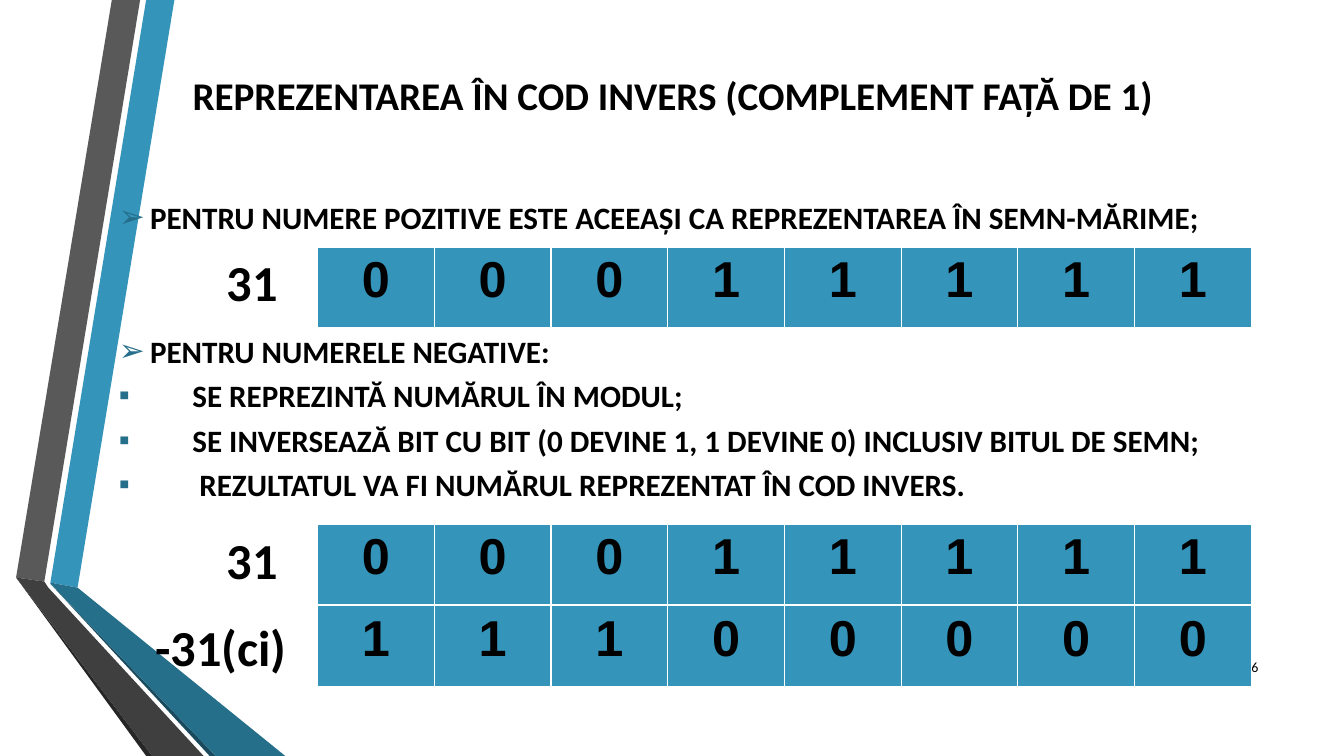
from dataclasses import dataclass

from lxml.etree import SubElement
from pptx import Presentation
from pptx.dml.color import RGBColor
from pptx.enum.text import MSO_ANCHOR, PP_ALIGN
from pptx.oxml.ns import qn
from pptx.util import Inches, Pt

BLACK = RGBColor(0x00, 0x00, 0x00)
WHITE = RGBColor(0xFF, 0xFF, 0xFF)
BLUE = RGBColor(0x34, 0x94, 0xBA)
TEAL = RGBColor(0x26, 0x6F, 0x8B)
NAVY = RGBColor(0x19, 0x4A, 0x5D)
GRAY = RGBColor(0x59, 0x59, 0x59)
DARK_GRAY = RGBColor(0x3F, 0x3F, 0x3F)
CHARCOAL = RGBColor(0x26, 0x26, 0x26)

BITS = 8
TABLE_LEFT, TABLE_WIDTH, ROW_HEIGHT = 3.15, 9.26, 0.81
FRAME_SIDE = 3.28
BORDERS = {"a:lnL": 1, "a:lnR": 1, "a:lnT": 1, "a:lnB": 3}


@dataclass
class Band:
    color: RGBColor
    points: list[tuple[float, float]]


@dataclass
class Bullet:
    text: str
    mark: str
    indent: float
    before: float = 10.4


@dataclass
class Label:
    text: str
    left: float
    top: float
    width: float


@dataclass
class Register:
    bits: str
    top: float


BANDS = [
    Band(BLUE, [(0.5, 5.78), (0.77, 5.83), (1.73, 0), (1.45, 0)]),
    Band(GRAY, [(1.39, 0), (1.11, 0), (0.16, 5.73), (0.44, 5.77)]),
    Band(CHARCOAL, [(0.16, 5.73), (1.45, 7.5), (1.51, 7.5)]),
    Band(NAVY, [(0.5, 5.79), (2.08, 7.5), (2.14, 7.5)]),
    Band(TEAL, [(0.5, 5.79), (2.14, 7.5), (2.83, 7.5), (0.77, 5.83), (0.5, 5.78)]),
    Band(DARK_GRAY, [(2.02, 7.5), (0.48, 5.83), (0.44, 5.77), (0.16, 5.73), (1.51, 7.5)]),
]
BULLETS = [
    Bullet("PENTRU NUMERE POZITIVE ESTE ACEEAȘI CA REPREZENTAREA ÎN SEMN-MĂRIME;", "➢", 0.31, 0),
    Bullet("PENTRU NUMERELE NEGATIVE:", "➢", 0.31, 74.6),  # leaves room for the first table
    Bullet("SE REPREZINTĂ NUMĂRUL ÎN MODUL;", "▪", 0.73),
    Bullet("SE INVERSEAZĂ BIT CU BIT (0 DEVINE 1, 1 DEVINE 0) INCLUSIV BITUL DE SEMN;", "▪", 0.73),
    Bullet("REZULTATUL VA FI NUMĂRUL REPREZENTAT ÎN COD INVERS.", "▪", 0.8),
]
LABELS = [
    Label("31", 2.15, 2.44, 1.68),
    Label("-31(ci)", 1.44, 6.06, 1.54),
    Label("31", 2.15, 5.2, 0.77),
]
REGISTERS = [
    Register("00011111", 2.45),
    Register("00011111", 5.2),
    Register("11100000", 5.2 + ROW_HEIGHT),
]


def style(p, size: float, name: str = "Calibri", bold: bool = True) -> None:
    for r in p.runs:
        r.font.size = Pt(size)
        r.font.name = name
        r.font.bold = bold
        r.font.color.rgb = BLACK


def add_box(s, left: float, top: float, width: float, height: float, anchor=MSO_ANCHOR.TOP):
    sp = s.shapes.add_textbox(Inches(left), Inches(top), Inches(width), Inches(height))
    tf = sp.text_frame
    tf.word_wrap = True
    tf.vertical_anchor = anchor
    return tf


def add_band(s, band: Band) -> None:
    points = [(Inches(x), Inches(y)) for x, y in band.points]
    builder = s.shapes.build_freeform(*points[0])
    builder.add_line_segments(points[1:], close=True)
    sp = builder.convert_to_shape()
    sp.shadow.inherit = False
    sp.fill.solid()
    sp.fill.fore_color.rgb = band.color
    sp.line.fill.background()


def add_title(s) -> None:
    sp = s.shapes.title
    sp.left, sp.top, sp.width, sp.height = (Inches(v) for v in (0.92, 0.55, 11.5, 1.45))
    tf = sp.text_frame
    tf.vertical_anchor = MSO_ANCHOR.MIDDLE
    p = tf.paragraphs[0]
    p.text = "REPREZENTAREA ÎN COD INVERS (COMPLEMENT FAȚĂ DE 1)\v"
    p.alignment = PP_ALIGN.CENTER
    style(p, 28)
    # The empty second line is taller than the first
    SubElement(p._p.find(qn("a:br")), qn("a:rPr"), sz="4000")
    SubElement(p._p, qn("a:endParaRPr"), sz="4000")


def add_bullet(p, bullet: Bullet) -> None:
    p.text = bullet.text
    p.alignment = PP_ALIGN.JUSTIFY
    p.line_spacing = 0.8
    p.space_before = Pt(bullet.before)
    pPr = p._p.get_or_add_pPr()
    pPr.set("marL", str(Inches(bullet.indent)))
    pPr.set("indent", str(-Inches(bullet.indent)))
    color = SubElement(pPr, qn("a:buClr"))
    SubElement(color, qn("a:srgbClr"), val=str(TEAL))
    SubElement(pPr, qn("a:buFont"), typeface="Arial")
    SubElement(pPr, qn("a:buChar"), char=bullet.mark)
    style(p, 22.2)


def add_label(s, label: Label) -> None:
    p = add_box(s, label.left, label.top, label.width, 0.71).paragraphs[0]
    p.text = label.text
    style(p, 36)


def format_cell(cell, bit: str) -> None:
    p = cell.text_frame.paragraphs[0]
    p.text = bit
    p.alignment = PP_ALIGN.CENTER
    style(p, 36, "Arial")
    tcPr = cell._tc.get_or_add_tcPr()
    for tag, width in BORDERS.items():
        ln = SubElement(tcPr, qn(tag), w=str(Pt(width)))
        SubElement(SubElement(ln, qn("a:solidFill")), qn("a:srgbClr"), val=str(WHITE))
    cell.fill.solid()
    cell.fill.fore_color.rgb = BLUE


def add_register(s, register: Register) -> None:
    frame = s.shapes.add_table(1, BITS, Inches(TABLE_LEFT), Inches(register.top),
                               Inches(TABLE_WIDTH), Inches(ROW_HEIGHT))
    table = frame.table
    table.first_row = False
    table.horz_banding = False
    for cell, bit in zip(table.iter_cells(), register.bits):
        format_cell(cell, bit)
    # The columns and the row keep their own sizes
    frame.width = frame.height = Inches(FRAME_SIDE)


def main() -> None:
    prs = Presentation()
    prs.slide_width, prs.slide_height = Inches(13.33), Inches(7.5)
    s = prs.slides.add_slide(prs.slide_layouts[5])

    # Folded bands on the left
    for band in BANDS:
        add_band(s, band)

    add_title(s)

    # Slide number
    p = add_box(s, 11.98, 6.42, 0.6, 0.4, MSO_ANCHOR.MIDDLE).paragraphs[0]
    p.text = "16"
    p.alignment = PP_ALIGN.RIGHT
    style(p, 10, bold=False)

    # Rules of the inverse code
    tf = add_box(s, 1.08, 1.8, 11.82, 3.42, MSO_ANCHOR.MIDDLE)
    for i, bullet in enumerate(BULLETS):
        add_bullet(tf.add_paragraph() if i else tf.paragraphs[0], bullet)

    # Binary examples
    for label in LABELS:
        add_label(s, label)
    for register in REGISTERS:
        add_register(s, register)

    prs.save("out.pptx")


if __name__ == "__main__":
    main()
